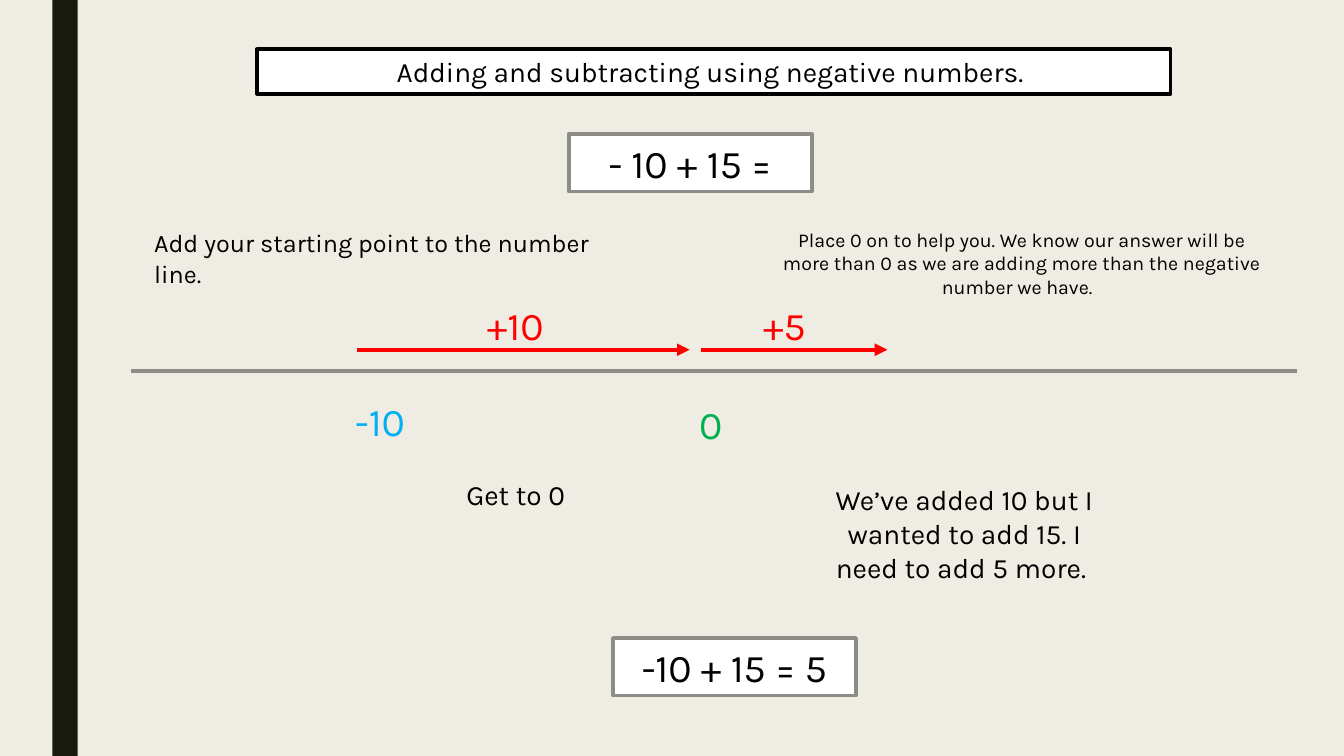
from lxml.etree import SubElement
from pptx import Presentation
from pptx.dml.color import RGBColor
from pptx.enum.shapes import MSO_CONNECTOR as Link, MSO_SHAPE as Shape
from pptx.enum.text import MSO_AUTO_SIZE as Fit, PP_ALIGN as Align
from pptx.oxml.ns import qn
from pptx.util import Inches, Pt

HUES = {
    "paper": "EFEDE3", "bar": "191B0E", "white": "FFFFFF", "black": "000000",
    "gray": "8C8D86", "blue": "00B0F0", "green": "00B050", "red": "FF0000",
}


def hue(name):
    """Return the named colour."""
    return RGBColor.from_string(HUES[name])


def set_all(item, form):
    """Set each attribute of the item from a dict."""
    for key, value in form.items():
        setattr(item, key, value)


def write(shape, text, size, color="black", align=Align.CENTER):
    """Put one paragraph of text in a shape."""
    frame = shape.text_frame
    set_all(frame, {"word_wrap": True, "auto_size": Fit.SHAPE_TO_FIT_TEXT})
    para = frame.paragraphs[0]
    para.alignment = align
    run = para.add_run()
    run.text = text
    set_all(run.font, {"name": "Karla", "size": Pt(size)})
    run.font.color.rgb = hue(color)


def add_rect(slide, area, fill, edge=None):
    """Draw a filled rectangle, with an outline if an edge colour is given."""
    rect = slide.shapes.add_shape(Shape.RECTANGLE, *map(Inches, area))
    rect.shadow.inherit = False
    rect.fill.solid()
    rect.fill.fore_color.rgb = hue(fill)
    if edge:
        rect.line.color.rgb = hue(edge)
        rect.line.width = Pt(2.75)
    else:
        rect.line.fill.background()
    return rect


def add_box(slide, area, text, size, edge="gray"):
    """Draw a white outlined box with text."""
    write(add_rect(slide, area, "white", edge), text, size)


def add_note(slide, area, text, size, **form):
    """Draw a text box."""
    write(slide.shapes.add_textbox(*map(Inches, area)), text, size, **form)


def add_mark(slide, left, top, text, color):
    """Label a point or a jump on the number line."""
    add_note(slide, (left, top, 0.88, 0.57), text, 28, color=color)


def add_line(slide, start, end, y, color, arrow=False):
    """Draw a level line, with an arrowhead at its end if asked."""
    ends = map(Inches, (start, y, end, y))
    line = slide.shapes.add_connector(Link.STRAIGHT, *ends)
    line.line.color.rgb = hue(color)
    line.line.width = Pt(3)
    if arrow:
        SubElement(line.line._get_or_add_ln(), qn("a:tailEnd"), type="triangle")
    SubElement(line._element.spPr, qn("a:effectLst"))


def main():
    """Build the slide and save it."""
    deck = Presentation()
    set_all(deck, {"slide_width": Inches(13.33), "slide_height": Inches(7.5)})
    slide = deck.slides.add_slide(deck.slide_layouts[6])
    slide.background.fill.solid()
    slide.background.fill.fore_color.rgb = hue("paper")

    add_rect(slide, (0.52, 0, 0.25, 7.5), "bar")
    add_box(slide, (2.55, 0.49, 9.06, 0.44),
            "Adding and subtracting using negative numbers. ", 20, "black")
    add_box(slide, (5.64, 1.33, 2.41, 0.57), " - 10 + 15 = ", 28)
    add_box(slide, (6.08, 6.33, 2.41, 0.57), "-10 + 15 = 5", 28)

    add_line(slide, 1.3, 12.86, 3.68, "gray")
    for start, end in ((3.54, 6.84), (6.95, 8.8)):
        add_line(slide, start, end, 3.47, "red", arrow=True)
    for mark in ((3.33, 3.89, "-10", "blue"), (6.61, 3.92, "0", "green"),
                 (4.67, 2.94, "+10", "red"), (7.34, 2.94, "+5", "red")):
        add_mark(slide, *mark)

    add_note(slide, (1.43, 2.21, 4.68, 0.7),
             "Add your starting point to the number line.", 18, align=Align.LEFT)
    add_note(slide, (7.59, 2.21, 5.09, 0.81),
             "Place 0 on to help you. We know our answer will be more than 0 "
             "as we are adding more than the negative number we have.  ", 14)
    add_note(slide, (4.22, 4.69, 1.79, 0.44), "Get to 0", 20)
    add_note(slide, (8.04, 4.74, 3.05, 1.11),
             "We’ve added 10 but I wanted to add 15. I need to add 5 more. ", 20)
    deck.save("out.pptx")


if __name__ == "__main__":
    main()
